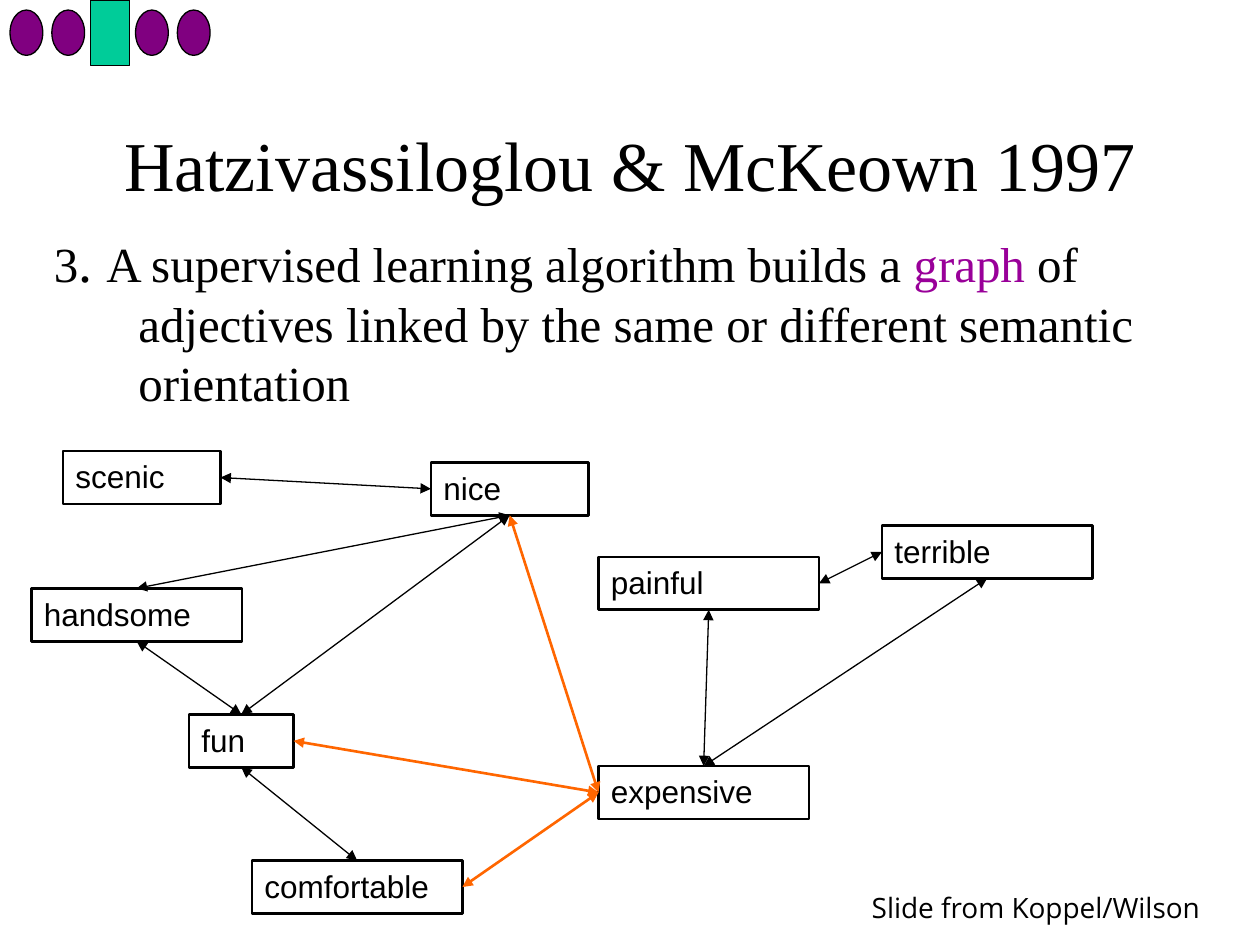
from lxml.etree import SubElement
from pptx import Presentation
from pptx.dml.color import RGBColor
from pptx.enum.shapes import MSO_CONNECTOR, MSO_SHAPE
from pptx.enum.text import MSO_ANCHOR, PP_ALIGN
from pptx.oxml.ns import qn
from pptx.util import Inches, Pt

SERIF = {"name": "Times New Roman", "size": Pt(28)}
SANS = {"name": "Arial", "size": Pt(18)}
TOP, LEFT, BASE, RIGHT = range(4)
BLACK, ORANGE = "000000", "FF6600"

WORDS = {
    "nice": (3.42, 3.67, 1.25),
    "handsome": (0.25, 4.67, 1.67),
    "terrible": (7, 4.17, 1.67),
    "comfortable": (2, 6.83, 1.67),
    "painful": (4.75, 4.42, 1.75),
    "expensive": (4.75, 6.08, 1.67),
    "fun": (1.5, 5.67, 0.83),
    "scenic": (0.5, 3.58, 1.25),
}
SAME = [
    ("nice", BASE, "handsome", TOP),
    ("terrible", LEFT, "painful", RIGHT),
    ("terrible", BASE, "expensive", TOP),
    ("handsome", BASE, "fun", TOP),
    ("comfortable", TOP, "fun", BASE),
    ("nice", BASE, "fun", TOP),
    ("scenic", RIGHT, "nice", LEFT),
    ("painful", BASE, "expensive", TOP),
]
DIFFER = [
    ("comfortable", RIGHT, "expensive", LEFT),
    ("nice", BASE, "expensive", LEFT),
    ("fun", RIGHT, "expensive", LEFT),
]


def tint(form, code):
    form.rgb = RGBColor.from_string(code)


def style(item, values):
    for key, value in values.items():
        setattr(item, key, value)


def write(para, text, font, code=BLACK):
    run = para.add_run()
    run.text = text
    style(run.font, font)
    tint(run.font.color, code)


def frame(slide, box, anchor=MSO_ANCHOR.TOP):
    area = slide.shapes.add_textbox(*map(Inches, box)).text_frame
    style(area, {"word_wrap": True, "vertical_anchor": anchor})
    return area.paragraphs[0]


def block(shapes, kind, box, fill=None, width=0.75):
    shape = shapes.add_shape(kind, *map(Inches, box))
    shape.shadow.inherit = False
    if fill:
        shape.fill.solid()
        tint(shape.fill.fore_color, fill)
    else:
        shape.fill.background()
    shape.line.width = Pt(width)
    tint(shape.line.color, BLACK)
    return shape


def badge(slide, box):
    left, top, width, height = box
    group = slide.shapes.add_group_shape().shapes
    step = width / 5
    for spot in (0, 1, 3, 4):
        oval = (left + 0.08 + spot * step, top + 0.08, 0.26, 0.36)
        block(group, MSO_SHAPE.OVAL, oval, "800080")
    block(group, MSO_SHAPE.RECTANGLE, (left + 0.72, top, 0.31, height), "00CC99")


def title(slide, box):
    para = frame(slide, box, MSO_ANCHOR.MIDDLE)
    para.alignment = PP_ALIGN.CENTER
    write(para, "Hatzivassiloglou & McKeown 1997", SERIF | {"size": Pt(40)})


def body(slide, box):
    para = frame(slide, box)
    para.space_before = Pt(4)
    props = para._p.get_or_add_pPr()
    props.set("marL", str(Inches(0.67)))
    props.set("indent", str(Inches(-0.67)))
    write(para, "3", SERIF)
    write(para, ". ", SERIF | {"size": Pt(32)})
    write(para, "A supervised learning algorithm builds a ", SERIF)
    write(para, "graph", SERIF, "990099")
    write(para, " of adjectives linked by the same or different semantic orientation", SERIF)


def node(slide, word, box):
    shape = block(slide.shapes, MSO_SHAPE.RECTANGLE, box, width=1.5)
    area = shape.text_frame
    style(area, {"word_wrap": True, "vertical_anchor": MSO_ANCHOR.TOP})
    para = area.paragraphs[0]
    para.alignment = PP_ALIGN.LEFT
    write(para, word, SANS)
    return shape


def link(slide, start, out, end, into, code, width):
    wire = slide.shapes.add_connector(MSO_CONNECTOR.STRAIGHT, 0, 0, 0, 0)
    wire.begin_connect(start, out)
    wire.end_connect(end, into)
    wire.line.width = Pt(width)
    tint(wire.line.color, code)
    line = wire.line._get_or_add_ln()
    for tip in ("a:headEnd", "a:tailEnd"):
        SubElement(line, qn(tip), type="triangle")
    SubElement(wire._element.spPr, qn("a:effectLst"))


def graph(slide, box):
    left, top = box[:2]
    nodes = {
        word: node(slide, word, (left + x, top + y, width, 0.42))
        for word, (x, y, width) in WORDS.items()
    }
    for links, code, width in ((SAME, BLACK, 0.75), (DIFFER, ORANGE, 1.5)):
        for start, out, end, into in links:
            link(slide, nodes[start], out, nodes[end], into, code, width)


def credit(slide, box):
    font = {"name": "Open Sans", "size": Pt(16)}
    write(frame(slide, box), "Slide from Koppel/Wilson", font)


def main():
    deck = Presentation()
    style(deck, {"slide_width": Inches(10), "slide_height": Inches(7.5)})
    slide = deck.slides.add_slide(deck.slide_layouts[6])
    title(slide, (0.75, 0.67, 8.5, 1.25))
    body(slide, (0.33, 1.75, 9.33, 1.83))
    graph(slide, (0, 0, 10, 7.5))
    badge(slide, (0, 0, 1.66, 0.52))
    credit(slide, (6.82, 7.02, 3.18, 0.37))
    deck.save("out.pptx")


if __name__ == "__main__":
    main()
